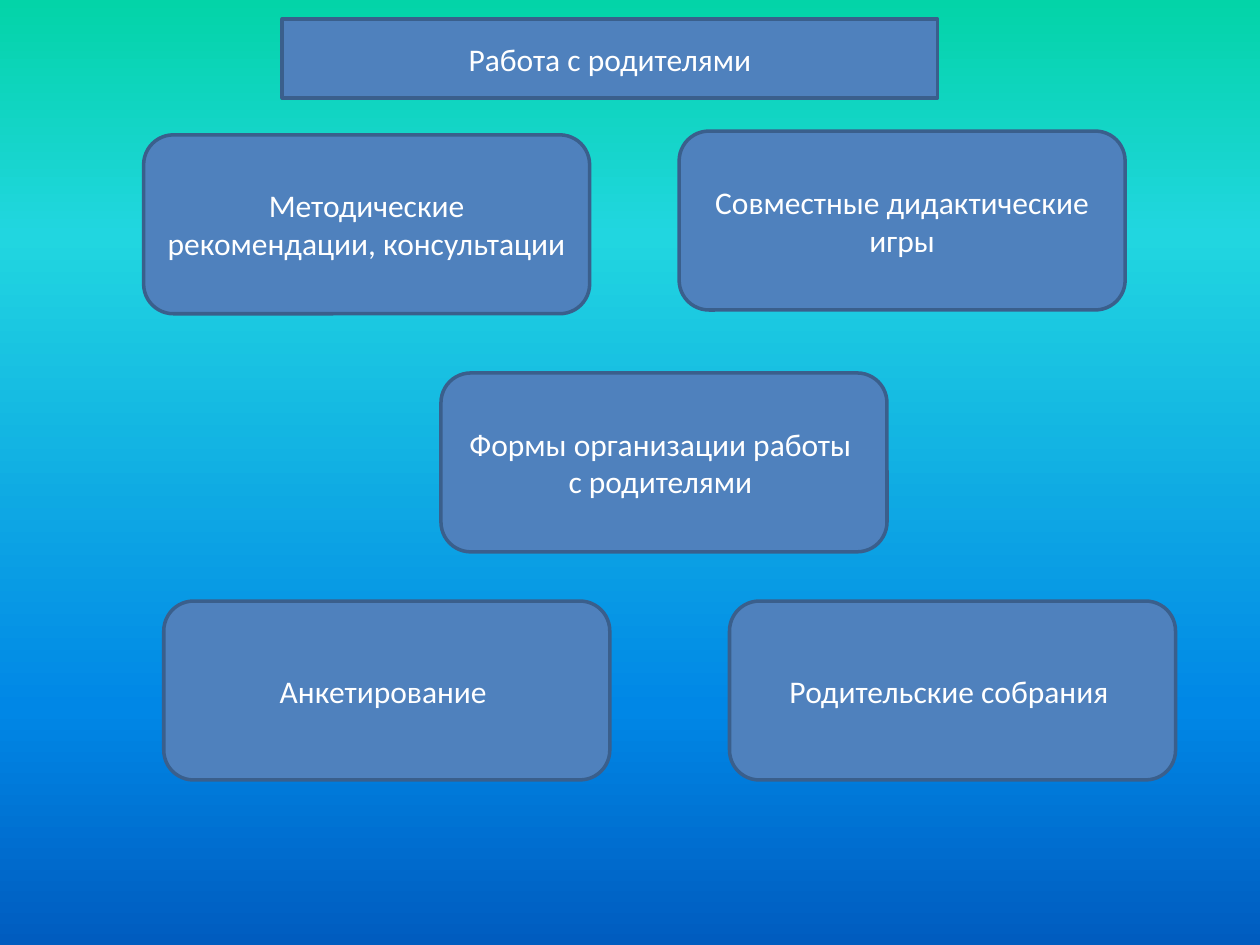
from typing import NamedTuple

from lxml.etree import SubElement
from pptx import Presentation
from pptx.dml.color import RGBColor
from pptx.enum.shapes import MSO_SHAPE as Shape
from pptx.enum.text import MSO_ANCHOR as Anchor, MSO_AUTO_SIZE as Fit, PP_ALIGN as Align
from pptx.oxml.ns import qn
from pptx.util import Inches, Pt

FILL, EDGE, WHITE = "4F81BD", "3A5F8C", "FFFFFF"
SKY = [(0, "03D4A8"), (25, "21D6E0"), (75, "0087E6"), (100, "005CBF")]
CARD_W, CARD_H = 3.54, 1.42


class Card(NamedTuple):
    left: float
    top: float
    text: str


CARDS = [
    Card(1.14, 1.07, "Методические рекомендации, консультации"),
    Card(5.39, 1.04, "Совместные дидактические игры"),
    Card(3.5, 2.96, "Формы организации работы \nс родителями "),
    Card(5.79, 4.77, "Родительские собрания "),
    Card(1.3, 4.77, "Анкетирование "),
]


def color(code: str) -> RGBColor:
    return RGBColor.from_string(code)


def paint_sky(slide) -> None:
    """Fill the background with a top-down gradient of all SKY stops."""
    fill = slide.background.fill
    fill.gradient()
    fill.gradient_angle = 270
    stops = next(slide.element.iter(qn("a:gsLst")))
    for old in list(stops):
        stops.remove(old)
    for percent, code in SKY:
        stop = SubElement(stops, qn("a:gs"), pos=str(percent * 1000))
        SubElement(stop, qn("a:srgbClr"), val=code)


def write(shape, text: str, *, size: float = 18, font: str = "Calibri",
          ink: str = WHITE, align: Align = Align.CENTER) -> None:
    frame = shape.text_frame
    frame.text = text
    frame.word_wrap = True
    frame.auto_size = Fit.NONE
    frame.vertical_anchor = Anchor.MIDDLE
    for para in frame.paragraphs:
        para.alignment = align
        for run in para.runs:
            run.font.size = Pt(size)
            run.font.name = font
            run.font.color.rgb = color(ink)


def style(shape) -> None:
    shape.fill.solid()
    shape.fill.fore_color.rgb = color(FILL)
    shape.line.color.rgb = color(EDGE)
    shape.line.width = Pt(2)


def draw_title(slide, text: str) -> None:
    title = slide.shapes.title
    title.left, title.top = Inches(2.24), Inches(0.15)
    title.width, title.height = Inches(5.2), Inches(0.63)
    outline = SubElement(title.element.spPr, qn("a:prstGeom"), prst="roundRect")
    SubElement(outline, qn("a:avLst"))
    style(title)
    write(title, text)


def draw_card(slide, card: Card) -> None:
    box = slide.shapes.add_shape(
        Shape.ROUNDED_RECTANGLE, Inches(card.left), Inches(card.top),
        Inches(CARD_W), Inches(CARD_H))
    box.shadow.inherit = False
    style(box)
    write(box, card.text)


def main() -> None:
    deck = Presentation()
    deck.slide_width, deck.slide_height = Inches(10), Inches(7.5)
    slide = deck.slides.add_slide(deck.slide_layouts[5])
    paint_sky(slide)
    draw_title(slide, "Работа с родителями")
    for card in CARDS:
        draw_card(slide, card)
    deck.save("out.pptx")


if __name__ == "__main__":
    main()
